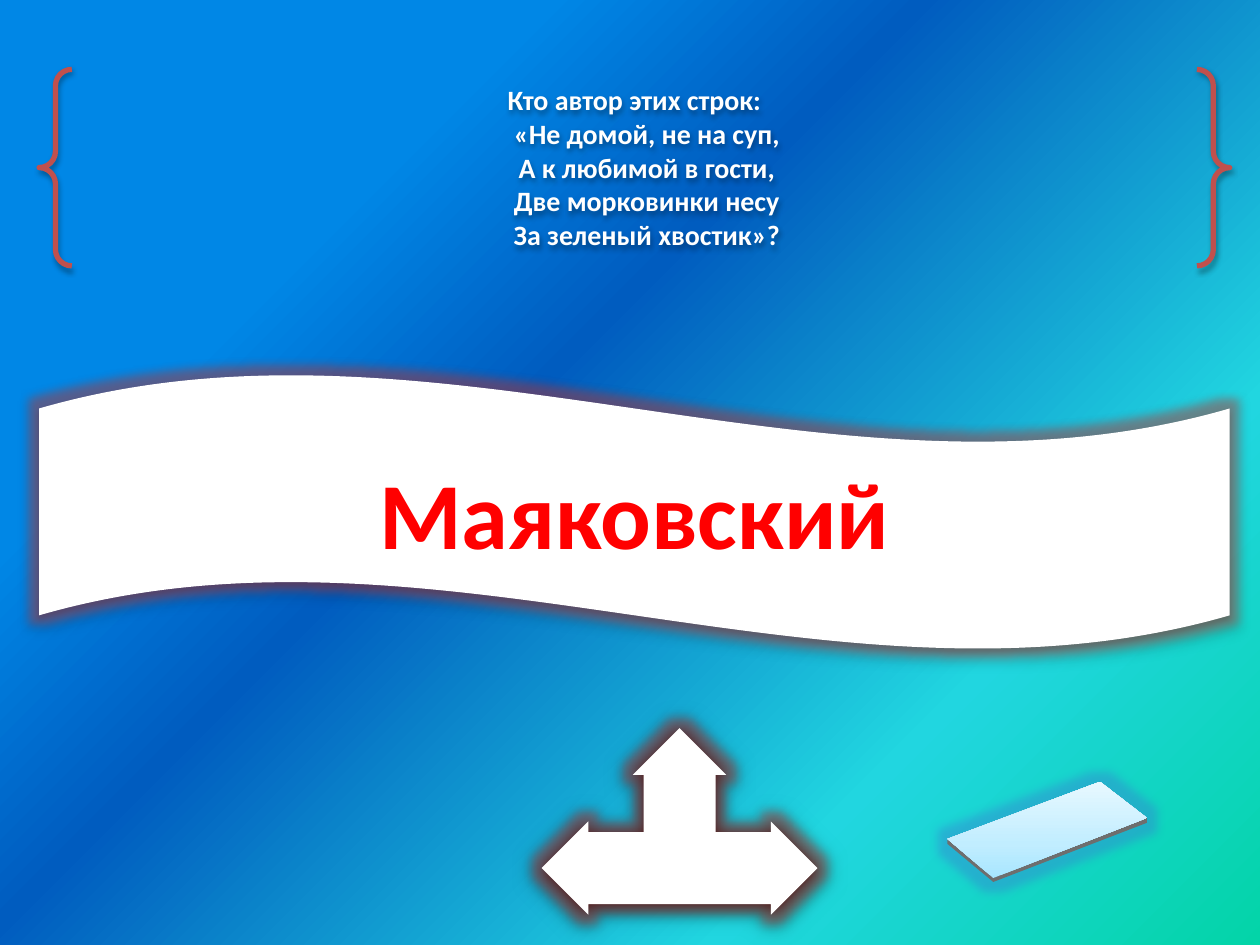
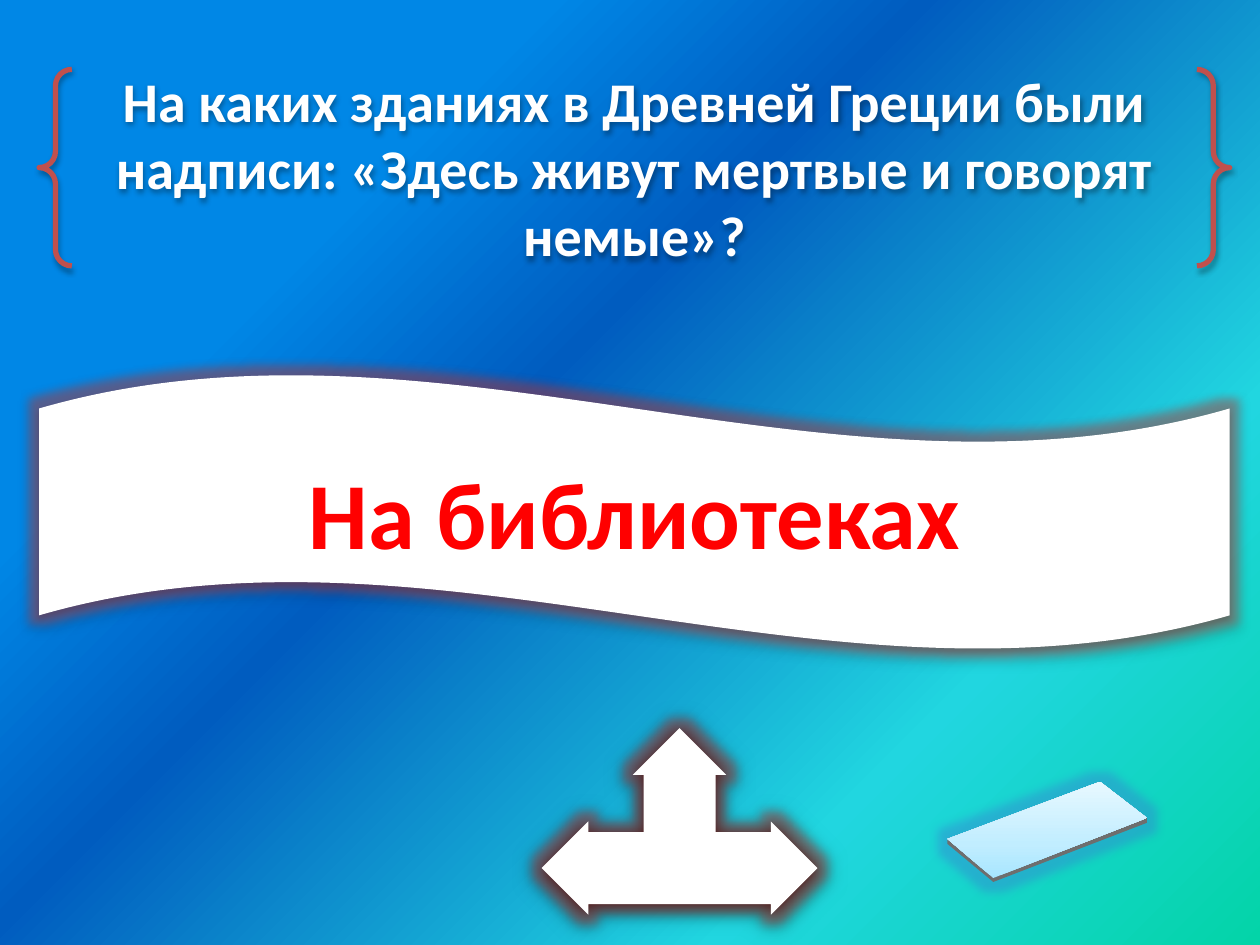
from pptx import Presentation
from pptx.dml.color import RGBColor
from pptx.enum.shapes import MSO_SHAPE
from pptx.enum.text import MSO_ANCHOR, PP_ALIGN
from pptx.oxml import parse_xml
from pptx.oxml.ns import nsdecls, qn
from pptx.util import Cm, Pt

FONT = "Calibri"
WHITE = RGBColor(0xFF, 0xFF, 0xFF)
RED = RGBColor(0xFF, 0x00, 0x00)
BRICK = RGBColor(0xC0, 0x50, 0x4D)
BLACK = RGBColor(0x00, 0x00, 0x00)
SLAB_SIDE = RGBColor(0x6E, 0x6E, 0x6E)
RED_GLOW = RGBColor(0xD0, 0x38, 0x34)
BLUE_GLOW = RGBColor(0x3A, 0x7C, 0xD2)

# Gradient stops: position in percent, colour, opacity in percent
SEA = [(0, RGBColor(0x03, 0xD4, 0xA8), 100),
       (25, RGBColor(0x21, 0xD6, 0xE0), 100),
       (58, RGBColor(0x00, 0x5C, 0xBF), 59),
       (75, RGBColor(0x00, 0x87, 0xE6), 100)]
ICE = [(0, RGBColor(0xA7, 0xE6, 0xFF), 100),
       (35, RGBColor(0xC1, 0xED, 0xFF), 100),
       (100, RGBColor(0xE7, 0xF8, 0xFF), 100)]
FROM_CORNER = ('<a:path path="circle">'
               '<a:fillToRect l="100000" t="100000"/></a:path>')
UPWARD = '<a:lin ang="16200000" scaled="0"/>'

# Regions: left, top, width, height
QUESTION_BOX = (Cm(0.79), Cm(1.4), Cm(24), Cm(3.96))
ANSWER_BOX = (Cm(0.79), Cm(7.54), Cm(24), Cm(5.56))
ARROW_BOX = (Cm(10.92), Cm(14.68), Cm(5.56), Cm(3.76))
BUTTON_BOX = (Cm(19.1), Cm(15.76), Cm(4.02), Cm(2.02))

QUIZ = [
    (["Кто автор этих строк:",
      "«Не домой, не на суп,",
      "А к любимой в гости,",
      "Две морковинки несу",
      "За зеленый хвостик»?"], Pt(16), "Маяковский"),
    (["На каких зданиях в Древней Греции были надписи: "
      "«Здесь живут мертвые и говорят немые»?"], Pt(32), "На библиотеках"),
]


def color_xml(color, opacity):
    return (f'<a:srgbClr val="{color}">'
            f'<a:alpha val="{opacity * 1000}"/></a:srgbClr>')


def gradient(stops, direction):
    gs = "".join(f'<a:gs pos="{pos * 1000}">{color_xml(color, opacity)}</a:gs>'
                 for pos, color, opacity in stops)
    return parse_xml(f'<a:gradFill {nsdecls("a")} rotWithShape="1">'
                     f'<a:gsLst>{gs}</a:gsLst>{direction}</a:gradFill>')


def replace_solid(parent, fill):
    parent.replace(parent.find(qn("a:solidFill")), fill)


def add_effects(sp, shadow=None, glow=None):
    """shadow: opacity, blur, distance, angle; glow: colour, radius."""
    sp.shadow.inherit = False
    effects = ""
    if glow:
        color, radius = glow
        effects += f'<a:glow rad="{Pt(radius)}">{color_xml(color, 40)}</a:glow>'
    if shadow:
        opacity, blur, distance, angle = shadow
        effects += (f'<a:outerShdw blurRad="{Pt(blur)}" dist="{Pt(distance)}" '
                    f'dir="{angle * 60000}" rotWithShape="0">'
                    f'{color_xml(BLACK, opacity)}</a:outerShdw>')
    sp_pr = sp.element.spPr
    sp_pr.replace(sp_pr.find(qn("a:effectLst")), parse_xml(
        f'<a:effectLst {nsdecls("a")}>{effects}</a:effectLst>'))


def set_text(sp, lines, size, color):
    tf = sp.text_frame
    tf.word_wrap = True
    tf.vertical_anchor = MSO_ANCHOR.MIDDLE
    tf.text = "\n".join(lines)
    for p in tf.paragraphs:
        p.alignment = PP_ALIGN.CENTER
        for r in p.runs:
            r.font.name, r.font.size, r.font.bold = FONT, size, True
            r.font.color.rgb = color


def set_background(s):
    s.background.fill.solid()
    replace_solid(s.element.find(".//" + qn("p:bgPr")),
                  gradient(SEA, FROM_CORNER))


def add_white_shape(s, kind, box):
    sp = s.shapes.add_shape(kind, *box)
    sp.fill.solid()
    sp.fill.fore_color.rgb = WHITE
    sp.line.fill.background()
    return sp


def add_question(s, box, lines, size):
    sp = s.shapes.add_shape(MSO_SHAPE.DOUBLE_BRACE, *box)
    sp.fill.background()
    sp.line.color.rgb = BRICK
    sp.line.width = Pt(3)
    add_effects(sp, shadow=(35, 3.1, 1.8, 90))
    set_text(sp, lines, size, WHITE)
    tf = sp.text_frame
    tf.margin_top, tf.margin_bottom = 0, Cm(0.36)
    # Quoted verse stands slightly right of the opening line
    for p in tf.paragraphs[1:]:
        p._p.get_or_add_pPr().set("marL", str(Cm(0.5)))


def add_answer(s, box, answer):
    sp = add_white_shape(s, MSO_SHAPE.WAVE, box)
    add_effects(sp, shadow=(32, 3.5, 2.2, 90), glow=(RED_GLOW, 11))
    set_text(sp, [answer], Pt(54), RED)


def add_arrow(s, box):
    sp = add_white_shape(s, MSO_SHAPE.LEFT_RIGHT_UP_ARROW, box)
    for i, value in enumerate((0.386, 0.25, 0.25)):
        sp.adjustments[i] = value
    add_effects(sp, shadow=(100, 8.5, 1, 90), glow=(RED_GLOW, 11))


def add_face(s, box, corners, color):
    """Polygon with corners given as fractions of the box."""
    left, top, width, height = box
    points = [(int(left + x * width), int(top + y * height))
              for x, y in corners]
    builder = s.shapes.build_freeform(*points[0])
    builder.add_line_segments(points[1:], close=True)
    sp = builder.convert_to_shape()
    sp.fill.solid()
    sp.fill.fore_color.rgb = color
    sp.line.fill.background()
    return sp


def add_return_button(s, box):
    west, north, east, south = (0, 0.57), (0.765, 0), (1, 0.36), (0.23, 0.96)
    slab = add_face(s, box, [west, north, east, (1, 0.41), (0.23, 1),
                             (0, 0.62)], SLAB_SIDE)
    add_effects(slab, glow=(BLUE_GLOW, 11))
    top = add_face(s, box, [west, north, east, south], WHITE)
    replace_solid(top.element.spPr, gradient(ICE, UPWARD))
    add_effects(top)


def add_quiz_slide(prs, lines, size, answer):
    s = prs.slides.add_slide(prs.slide_layouts[6])
    set_background(s)
    add_question(s, QUESTION_BOX, lines, size)
    add_answer(s, ANSWER_BOX, answer)
    add_arrow(s, ARROW_BOX)
    add_return_button(s, BUTTON_BOX)


def main():
    prs = Presentation()
    prs.slide_width, prs.slide_height = Cm(25.4), Cm(19.05)
    for lines, size, answer in QUIZ:
        add_quiz_slide(prs, lines, size, answer)
    prs.save("out.pptx")


if __name__ == "__main__":
    main()
